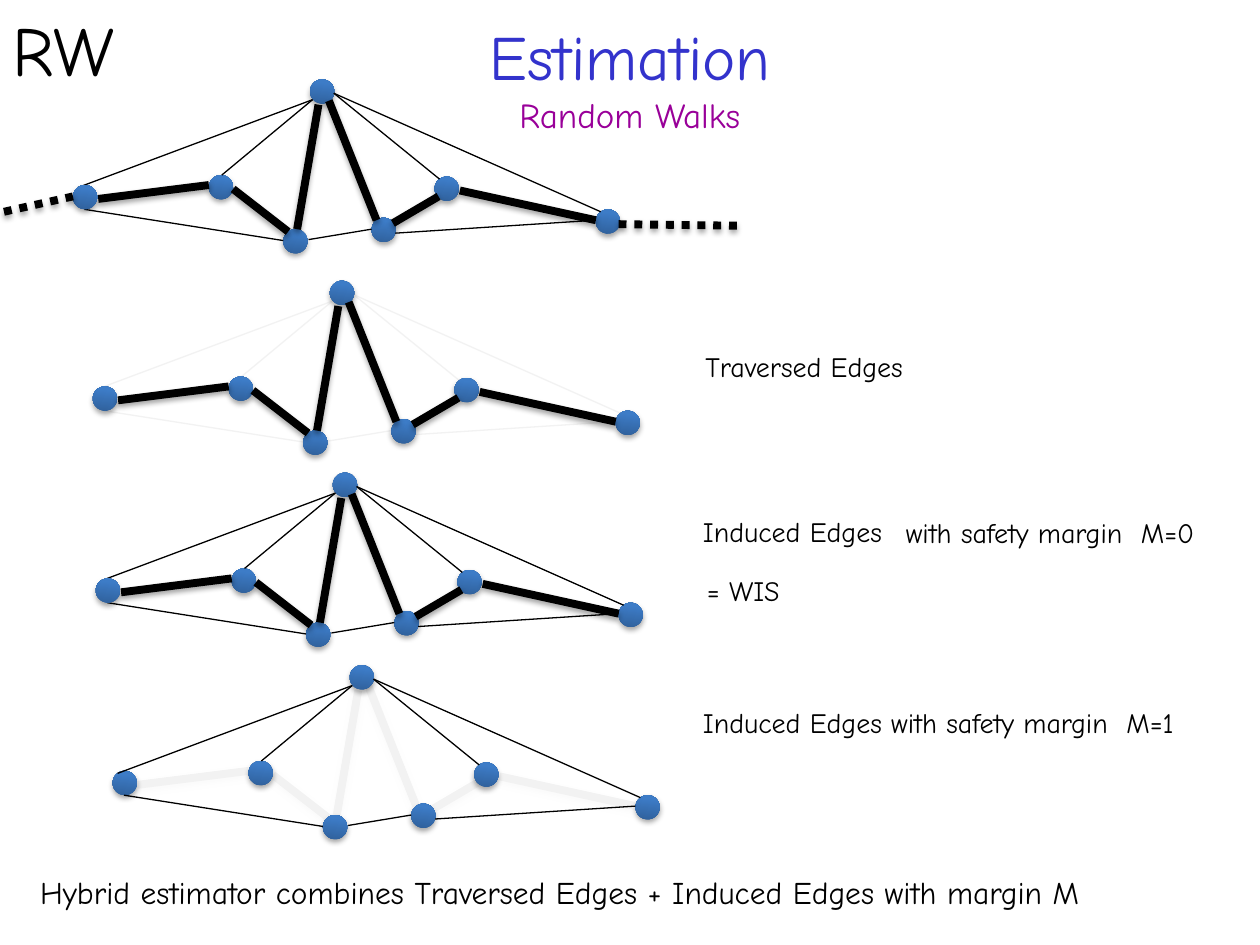
from lxml.etree import SubElement
from pptx import Presentation
from pptx.dml.color import RGBColor as RGB
from pptx.enum.dml import MSO_LINE
from pptx.enum.shapes import MSO_CONNECTOR, MSO_SHAPE
from pptx.enum.text import MSO_ANCHOR, MSO_AUTO_SIZE as AUTO, PP_ALIGN
from pptx.oxml.ns import qn
from pptx.util import Cm, Pt

COLORS = {"ink": "000000", "title": "3333CC", "subtitle": "990099", "veil": "FFFFFF",
          "node_dark": "2F5F99", "node_mid": "3D7CC7", "node_light": "3A7CCB"}
NODE_SIZE = 0.49

# All graph coordinates are in cm, relative to the graph's own origin.
START = [(0, 2.13)]
STOPS = [(2.74, 1.93), (4.24, 3.02), (4.78, 0), (6.02, 2.79), (7.29, 1.96), (10.54, 2.62)]
WALK = [(0.51, 2.41, 2.74, 2.13), (3.23, 2.21, 4.34, 3.07), (4.52, 3.02, 4.95, 0.51),
        (5.16, 0.43, 6.12, 2.84), (6.45, 2.9, 7.37, 2.36), (7.8, 2.24, 10.54, 2.84)]
INDUCED = [(5.26, 0.28, 7.39, 2.01), (5.26, 0.28, 10.64, 2.67), (4.83, 0.41, 3, 1.93),
           (0.1, 2.18, 4.83, 0.41), (0.23, 2.62, 4.24, 3.25), (4.75, 3.23, 6.02, 3.02),
           (6.5, 3.1, 10.54, 2.84)]


class Sketch:
    font = "Comic Neue"
    thick, thin = 4.5, 0.75

    def __init__(self, slide):
        self.s = slide
        self.shapes = slide.shapes

    def effects(self, shape, shadow):
        """Replace the theme effects by a soft drop shadow, or by none."""
        lst = SubElement(shape.element.spPr, qn("a:effectLst"))
        if shadow:
            shd = SubElement(lst, qn("a:outerShdw"), blurRad="39400", dist="22900",
                             dir="5400000", rotWithShape="0")
            clr = SubElement(shd, qn("a:srgbClr"), val=COLORS["ink"])
            SubElement(clr, qn("a:alpha"), val="35000")

    def line(self, x1, y1, x2, y2, width, dash=None):
        ln = self.shapes.add_connector(MSO_CONNECTOR.STRAIGHT, Cm(x1), Cm(y1), Cm(x2), Cm(y2))
        ln.line.width = Pt(width)
        ln.line.color.rgb = RGB.from_string(COLORS["ink"])
        if dash:
            ln.line.dash_style = dash
        self.effects(ln, shadow=width == self.thick)

    def node(self, x, y):
        sp = self.shapes.add_shape(MSO_SHAPE.OVAL, Cm(x), Cm(y), Cm(NODE_SIZE), Cm(NODE_SIZE))
        sp.rotation = 6.9
        grad = SubElement(sp.element.spPr, qn("a:gradFill"), rotWithShape="1")
        stops = SubElement(grad, qn("a:gsLst"))
        for pos, name in ((0, "node_dark"), (80, "node_mid"), (100, "node_light")):
            gs = SubElement(stops, qn("a:gs"), pos=str(pos * 1000))
            SubElement(gs, qn("a:srgbClr"), val=COLORS[name])
        SubElement(grad, qn("a:lin"), ang="16200000", scaled="0")
        sp.line.fill.background()
        self.effects(sp, shadow=True)

    def veil(self, x, y):
        """Nearly opaque sheet that fades whatever lies behind it."""
        sp = self.shapes.add_shape(MSO_SHAPE.RECTANGLE, Cm(x), Cm(y), Cm(14.12), Cm(3.94))
        sp.fill.solid()
        sp.fill.fore_color.rgb = RGB.from_string(COLORS["veil"])
        clr = sp.element.spPr.find(qn("a:solidFill")).find(qn("a:srgbClr"))
        SubElement(clr, qn("a:alpha"), val="95000")
        sp.line.fill.background()
        sp.shadow.inherit = False

    def edges(self, origin, edges, width):
        ox, oy = origin
        for x1, y1, x2, y2 in edges:
            self.line(ox + x1, oy + y1, ox + x2, oy + y2, width)

    def walk(self, origin):
        self.edges(origin, WALK, self.thick)

    def induced(self, origin):
        self.edges(origin, INDUCED, self.thin)

    def nodes(self, origin, nodes):
        for x, y in nodes:
            self.node(origin[0] + x, origin[1] + y)

    def full_graph(self, origin):
        self.shapes = self.s.shapes.add_group_shape().shapes
        self.nodes(origin, STOPS)
        self.walk(origin)
        self.induced(origin)
        self.nodes(origin, START)
        self.shapes = self.s.shapes

    def faded_graph(self, origin, veil_at, behind, front):
        behind(origin)
        self.veil(*veil_at)
        self.nodes(origin, START + STOPS)
        front(origin)

    def text(self, x, y, w, h, *runs, centered=False):
        """Each run is (text, size, colour name) and stands on its own line."""
        tf = self.shapes.add_textbox(Cm(x), Cm(y), Cm(w), Cm(h)).text_frame
        tf.word_wrap = True
        tf.auto_size = AUTO.NONE if centered else AUTO.SHAPE_TO_FIT_TEXT
        p = tf.paragraphs[0]
        if centered:
            tf.vertical_anchor = MSO_ANCHOR.MIDDLE
            p.alignment = PP_ALIGN.CENTER
        for i, (words, size, color) in enumerate(runs):
            if i:
                p.add_line_break()
            r = p.add_run()
            r.text = words
            r.font.name = self.font
            r.font.size = Pt(size)
            r.font.color.rgb = RGB.from_string(COLORS[color])


def main():
    prs = Presentation()
    prs.slide_width, prs.slide_height = Cm(25.4), Cm(19.05)
    sk = Sketch(prs.slides.add_slide(prs.slide_layouts[6]))

    sk.faded_graph((2.27, 13.41), (0.91, 13.06), sk.walk, sk.induced)
    sk.text(1.27, -0.05, 22.86, 3.18, ("Estimation", 36, "title"),
            ("Random Walks", 20, "subtitle"), centered=True)
    sk.text(0, 0, 5.26, 1.96, ("RW", 40, "ink"))
    sk.full_graph((1.47, 1.6))
    sk.faded_graph((1.87, 5.66), (0.89, 5.36), sk.induced, sk.walk)
    sk.full_graph((1.93, 9.53))

    for x1, y1, x2, y2 in ((0.08, 4.27, 1.47, 3.96), (12.47, 4.52, 14.88, 4.55)):
        sk.line(x1, y1, x2, y2, sk.thick, MSO_LINE.ROUND_DOT)

    for x, y, w, words in (
        (13.97, 6.93, 10.59, "Traversed Edges"),
        (13.92, 10.24, 13.26, "Induced Edges"),
        (18.01, 10.26, 9.32, "with safety margin  M=0"),
        (14, 11.43, 2.97, "= WIS"),
        (13.92, 14.1, 13.51, "Induced Edges with safety margin  M=1"),
    ):
        sk.text(x, y, w, 0.94, (words, 16, "ink"))
    sk.text(0.56, 17.48, 24.74, 1.02,
            ("Hybrid estimator combines Traversed Edges + Induced Edges with margin M", 18, "ink"))

    prs.save("out.pptx")


if __name__ == "__main__":
    main()
